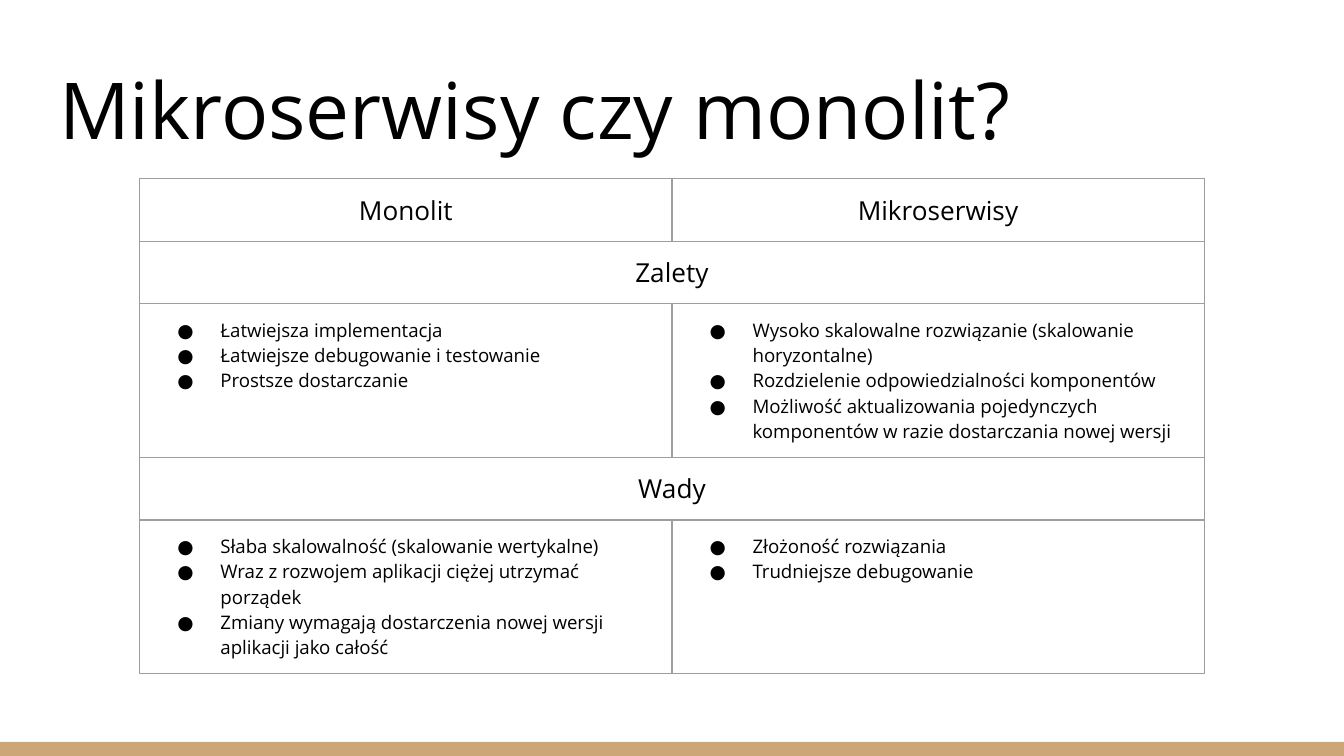
from lxml import etree
from pptx import Presentation
from pptx.dml.color import RGBColor
from pptx.enum.shapes import MSO_SHAPE
from pptx.enum.text import MSO_ANCHOR, MSO_AUTO_SIZE, PP_ALIGN
from pptx.oxml.ns import qn
from pptx.util import Emu, Pt

RECTANGLE = MSO_SHAPE.RECTANGLE
BOTTOM, NO_FIT = MSO_ANCHOR.BOTTOM, MSO_AUTO_SIZE.NONE
LEFT, CENTER = PP_ALIGN.LEFT, PP_ALIGN.CENTER
TITLE_ONLY = 5


def px(length):
    """200 px to the inch."""
    return Emu(length * 4572)


def color(hex_string):
    return RGBColor.from_string(hex_string)


class SlideBuilder:
    FONT = "Open Sans"
    INK, GRID, ACCENT = "000000", "9E9E9E", "CCA677"
    TITLE_SIZE, HEADING_SIZE, ITEM_SIZE = 42, 14, 10
    INSET = 20
    ITEM_INDENT, BULLET_HANG = 100, 64
    GRID_WIDTH = Pt(0.75)

    def __init__(self, slide):
        self.slide = slide

    def style_paragraph(self, paragraph, size, alignment):
        paragraph.alignment = alignment
        for run in paragraph.runs:
            run.font.name = self.FONT
            run.font.size = Pt(size)
            run.font.color.rgb = color(self.INK)

    def set_insets(self, holder):
        holder.margin_left = holder.margin_right = px(self.INSET)
        holder.margin_top = holder.margin_bottom = px(self.INSET)

    def bar(self, left, top, width, height):
        bar = self.slide.shapes.add_shape(
            RECTANGLE, px(left), px(top), px(width), px(height))
        bar.shadow.inherit = False
        bar.fill.solid()
        bar.fill.fore_color.rgb = color(self.ACCENT)
        bar.line.fill.background()

    def title(self, text, left, top, width, height):
        title = self.slide.shapes.title
        title.left, title.top = px(left), px(top)
        title.width, title.height = px(width), px(height)
        frame = title.text_frame
        frame.text = text
        frame.word_wrap = True
        frame.auto_size = NO_FIT
        frame.vertical_anchor = BOTTOM
        self.set_insets(frame)
        self.style_paragraph(frame.paragraphs[0], self.TITLE_SIZE, LEFT)

    def bullet(self, paragraph):
        properties = paragraph._p.get_or_add_pPr()
        properties.set("marL", str(px(self.ITEM_INDENT)))
        properties.set("indent", str(-px(self.BULLET_HANG)))
        bullet_color = etree.SubElement(properties, qn("a:buClr"))
        etree.SubElement(bullet_color, qn("a:srgbClr"), val=self.INK)
        etree.SubElement(
            properties, qn("a:buSzPts"), val=str(self.ITEM_SIZE * 100))
        etree.SubElement(properties, qn("a:buFont"), typeface=self.FONT)
        etree.SubElement(properties, qn("a:buChar"), char="●")

    def borders(self, cell):
        properties = cell._tc.get_or_add_tcPr()
        for position, side in enumerate(("lnL", "lnR", "lnT", "lnB")):
            line = etree.Element(qn(f"a:{side}"), w=str(self.GRID_WIDTH))
            fill = etree.SubElement(line, qn("a:solidFill"))
            etree.SubElement(fill, qn("a:srgbClr"), val=self.GRID)
            properties.insert(position, line)

    def cell(self, cell, content):
        """A string is a centred heading, a list is a bulleted list."""
        self.set_insets(cell)
        cell.fill.background()
        self.borders(cell)
        if isinstance(content, str):
            cell.text_frame.text = content
            self.style_paragraph(
                cell.text_frame.paragraphs[0], self.HEADING_SIZE, CENTER)
            return
        cell.text_frame.text = "\n".join(content)
        for paragraph in cell.text_frame.paragraphs:
            self.style_paragraph(paragraph, self.ITEM_SIZE, LEFT)
            self.bullet(paragraph)

    def table(self, rows, row_heights, left, top, width, height):
        columns = max(len(row) for row in rows)
        frame = self.slide.shapes.add_table(
            len(rows), columns, px(left), px(top), px(width), px(height))
        table = frame.table
        table.first_row = table.horz_banding = False
        for row_index, contents in enumerate(rows):
            table.rows[row_index].height = px(row_heights[row_index])
            for column in range(columns):
                content = contents[column] if column < len(contents) else ""
                self.cell(table.cell(row_index, column), content)
            if len(contents) == 1:
                table.cell(row_index, 0).merge(
                    table.cell(row_index, columns - 1))
        frame.height = px(height)


COMPARISON = [
    ["Monolit", "Mikroserwisy"],
    ["Zalety"],
    [
        ["Łatwiejsza implementacja",
         "Łatwiejsze debugowanie i testowanie",
         "Prostsze dostarczanie"],
        ["Wysoko skalowalne rozwiązanie (skalowanie horyzontalne)",
         "Rozdzielenie odpowiedzialności komponentów",
         "Możliwość aktualizowania pojedynczych komponentów "
         "w razie dostarczania nowej wersji"],
    ],
    ["Wady"],
    [
        ["Słaba skalowalność (skalowanie wertykalne)",
         "Wraz z rozwojem aplikacji ciężej utrzymać porządek",
         "Zmiany wymagają dostarczenia nowej wersji aplikacji jako całość"],
        ["Złożoność rozwiązania",
         "Trudniejsze debugowanie"],
    ],
]
ROW_HEIGHTS = [72, 84, 172, 84, 84]
SLIDE_WIDTH, SLIDE_HEIGHT = 2000, 1125
BAR_HEIGHT = 21


def main():
    presentation = Presentation()
    presentation.slide_width = px(SLIDE_WIDTH)
    presentation.slide_height = px(SLIDE_HEIGHT)
    layout = presentation.slide_layouts[TITLE_ONLY]
    builder = SlideBuilder(presentation.slides.add_slide(layout))

    # Accent along the bottom edge
    builder.bar(0, SLIDE_HEIGHT - BAR_HEIGHT, SLIDE_WIDTH, BAR_HEIGHT)

    # Heading
    builder.title("Mikroserwisy czy monolit?", 68, 70, 1864, 181)

    # Pros and cons
    builder.table(COMPARISON, ROW_HEIGHTS, 208, 266, 1584, 674)

    presentation.save("out.pptx")


if __name__ == "__main__":
    main()
